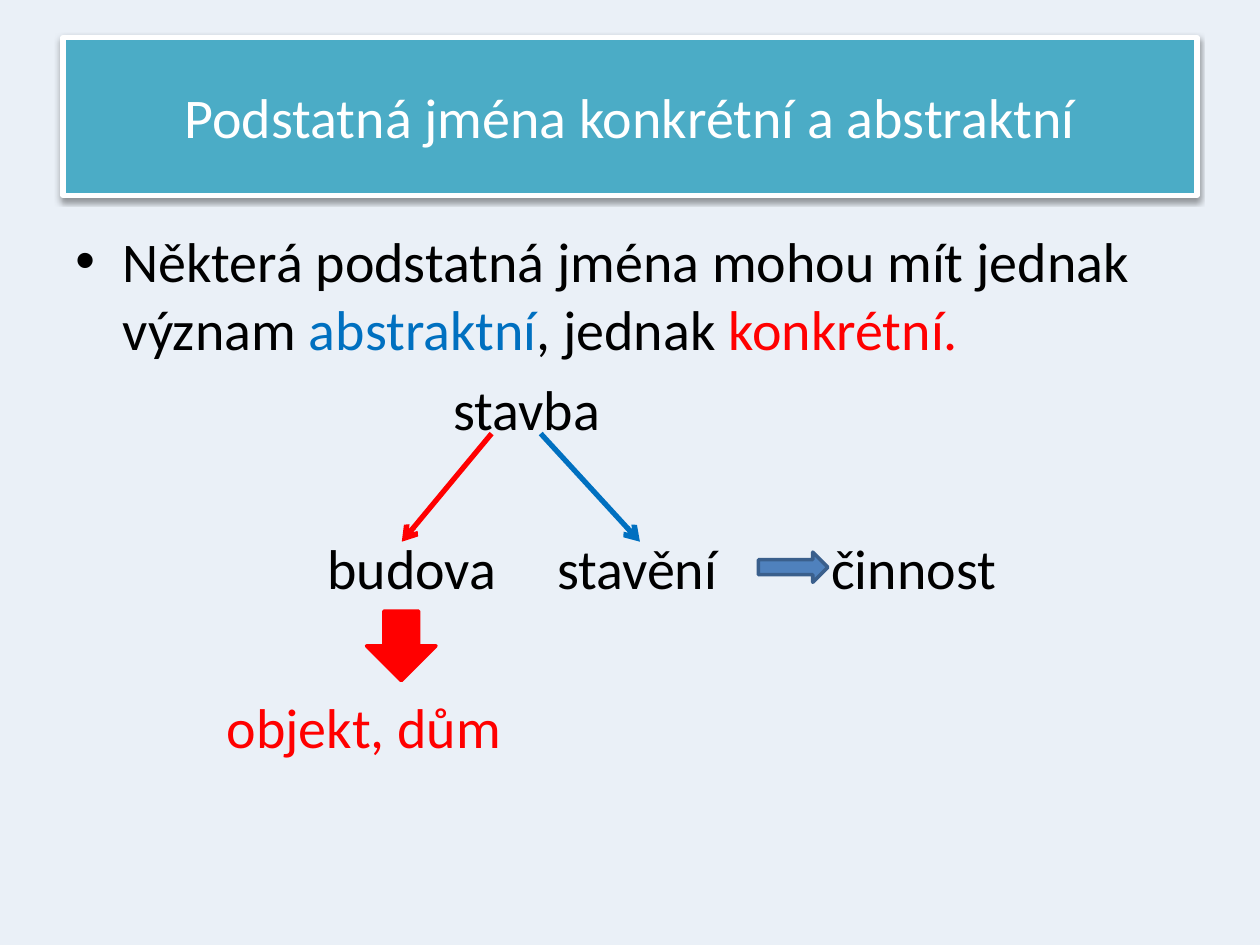
"""Build a slide on concrete and abstract nouns."""
from dataclasses import dataclass

from lxml import etree
from pptx import Presentation
from pptx.dml.color import RGBColor
from pptx.enum import shapes, text
from pptx.oxml.ns import qn
from pptx.util import Cm, Pt


@dataclass(frozen=True)
class Theme:
    font: str = "Calibri"
    size: int = 32
    back: str = "EAF0F7"
    teal: str = "4BACC6"
    white: str = "FFFFFF"
    black: str = "000000"
    red: str = "FF0000"
    blue: str = "0070C0"
    steel: str = "4F81BD"
    edge: str = "3A5F8C"
    thick: float = 3
    thin: float = 2


@dataclass(frozen=True)
class Word:
    label: str
    left: float
    row: int
    width: float
    color: str


@dataclass(frozen=True)
class Link:
    start: float
    end: float
    color: str


@dataclass(frozen=True)
class Block:
    kind: shapes.MSO_SHAPE
    box: tuple[float, float, float, float]
    fill: str
    line: str


LOOK = Theme()
LEFT, WIDTH = 1.27, 22.86
ROW_TOP, ROW_STEP, ROW_HIGH = 7.55, 3.21, 1.4
LINK_TOP, LINK_END = 8.74, 10.92

LEAD = [
    ("Některá podstatná jména mohou mít jednak význam ", LOOK.black),
    ("abstraktní", LOOK.blue),
    (", jednak ", LOOK.black),
    ("konkrétní.", LOOK.red),
]
WORDS = [
    Word("stavba", 9.14, 0, 3.2, LOOK.black),
    Word("budova", 6.6, 1, 3.6, LOOK.black),
    Word("stavění", 11.23, 1, 3.5, LOOK.black),
    Word("činnost", 16.76, 1, 3.6, LOOK.black),
    Word("objekt, dům", 4.57, 2, 5.9, LOOK.red),
]
LINKS = [Link(9.91, 8.1, LOOK.red), Link(10.9, 12.9, LOOK.blue)]
BLOCKS = [
    Block(shapes.MSO_SHAPE.RIGHT_ARROW, (15.29, 11.13, 1.4, 0.61), LOOK.steel, LOOK.edge),
    Block(shapes.MSO_SHAPE.DOWN_ARROW, (7.39, 12.32, 1.4, 1.4), LOOK.red, LOOK.red),
]


def tint(code: str) -> RGBColor:
    """Turn a hex code into a colour."""
    return RGBColor.from_string(code)


def add_run(para, label: str, color: str) -> None:
    """Append one styled run."""
    run = para.add_run()
    run.text = label
    run.font.name = LOOK.font
    run.font.size = Pt(LOOK.size)
    run.font.color.rgb = tint(color)


def paint(shape, fill: str, line: str, width: float) -> None:
    """Set the fill and outline of a shape."""
    shape.fill.solid()
    shape.fill.fore_color.rgb = tint(fill)
    shape.line.color.rgb = tint(line)
    shape.line.width = Pt(width)


def add_box(slide, left: float, top: float, width: float, high: float):
    """Add a wrapping text box and return its frame."""
    frame = slide.shapes.add_textbox(Cm(left), Cm(top), Cm(width), Cm(high)).text_frame
    frame.word_wrap = True
    return frame


def draw_title(slide) -> None:
    """Format the title as a teal banner with a soft shadow."""
    title = slide.shapes.title
    title.left, title.top = Cm(LEFT), Cm(0.76)
    title.width, title.height = Cm(WIDTH), Cm(3.18)
    paint(title, LOOK.teal, LOOK.white, LOOK.thick)
    list_fx = etree.SubElement(title._element.spPr, qn("a:effectLst"))
    shade = etree.SubElement(
        list_fx, qn("a:outerShdw"), blurRad=str(Pt(3.1)), dist=str(Pt(1.6)),
        dir="5400000", rotWithShape="0")
    hue = etree.SubElement(shade, qn("a:srgbClr"), val=LOOK.black)
    etree.SubElement(hue, qn("a:alpha"), val="38000")
    frame = title.text_frame
    frame.vertical_anchor = text.MSO_ANCHOR.MIDDLE
    para = frame.paragraphs[0]
    para.alignment = text.PP_ALIGN.CENTER
    add_run(para, "Podstatná jména konkrétní a abstraktní", LOOK.white)


def draw_lead(slide) -> None:
    """Add the bulleted sentence."""
    para = add_box(slide, LEFT, 4.45, WIDTH, 3.0).paragraphs[0]
    props = para._p.get_or_add_pPr()
    props.set("marL", str(Cm(0.95)))
    props.set("indent", str(Cm(-0.95)))
    etree.SubElement(props, qn("a:buFont"), typeface="Arial")
    etree.SubElement(props, qn("a:buChar"), char="•")
    for label, color in LEAD:
        add_run(para, label, color)


def draw_word(slide, word: Word) -> None:
    """Add one word of the diagram on its row."""
    top = ROW_TOP + word.row * ROW_STEP
    frame = add_box(slide, word.left, top, word.width, ROW_HIGH)
    frame.margin_left = frame.margin_right = 0
    frame.margin_top = frame.margin_bottom = 0
    add_run(frame.paragraphs[0], word.label, word.color)


def draw_link(slide, link: Link) -> None:
    """Add one thin arrow from the top word."""
    line = slide.shapes.add_connector(
        shapes.MSO_CONNECTOR.STRAIGHT,
        Cm(link.start), Cm(LINK_TOP), Cm(link.end), Cm(LINK_END))
    line.line.color.rgb = tint(link.color)
    line.line.width = Pt(LOOK.thick)
    etree.SubElement(line.line._get_or_add_ln(), qn("a:tailEnd"), type="arrow")
    etree.SubElement(line._element.spPr, qn("a:effectLst"))


def draw_block(slide, block: Block) -> None:
    """Add one block arrow."""
    shape = slide.shapes.add_shape(block.kind, *map(Cm, block.box))
    shape.shadow.inherit = False
    paint(shape, block.fill, block.line, LOOK.thin)


def main() -> None:
    """Build and save the slide."""
    deck = Presentation()
    deck.slide_width, deck.slide_height = Cm(25.4), Cm(19.05)
    slide = deck.slides.add_slide(deck.slide_layouts[5])
    slide.background.fill.solid()
    slide.background.fill.fore_color.rgb = tint(LOOK.back)
    draw_title(slide)
    draw_lead(slide)
    for word in WORDS:
        draw_word(slide, word)
    for link in LINKS:
        draw_link(slide, link)
    for block in BLOCKS:
        draw_block(slide, block)
    deck.save("out.pptx")


if __name__ == "__main__":
    main()
